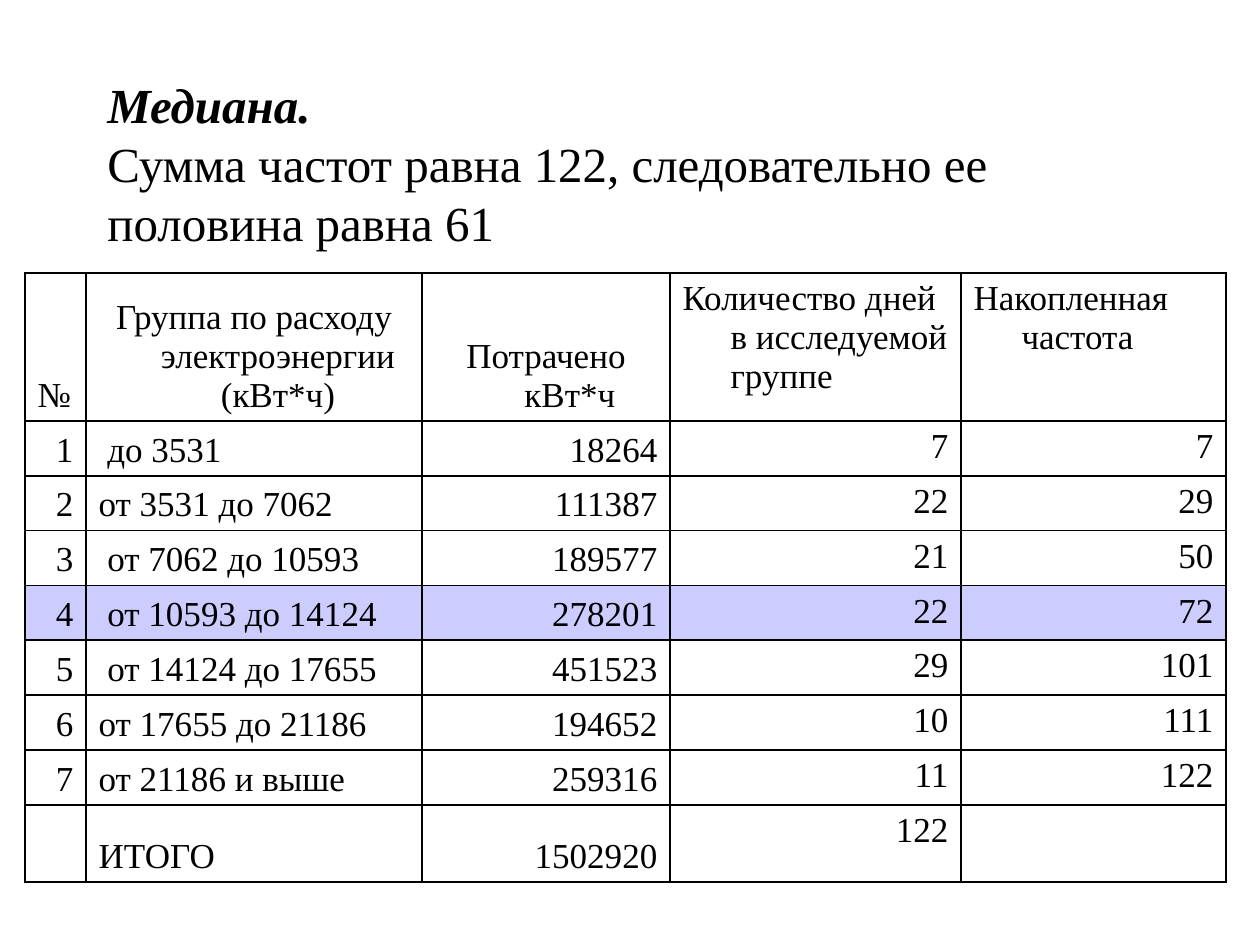
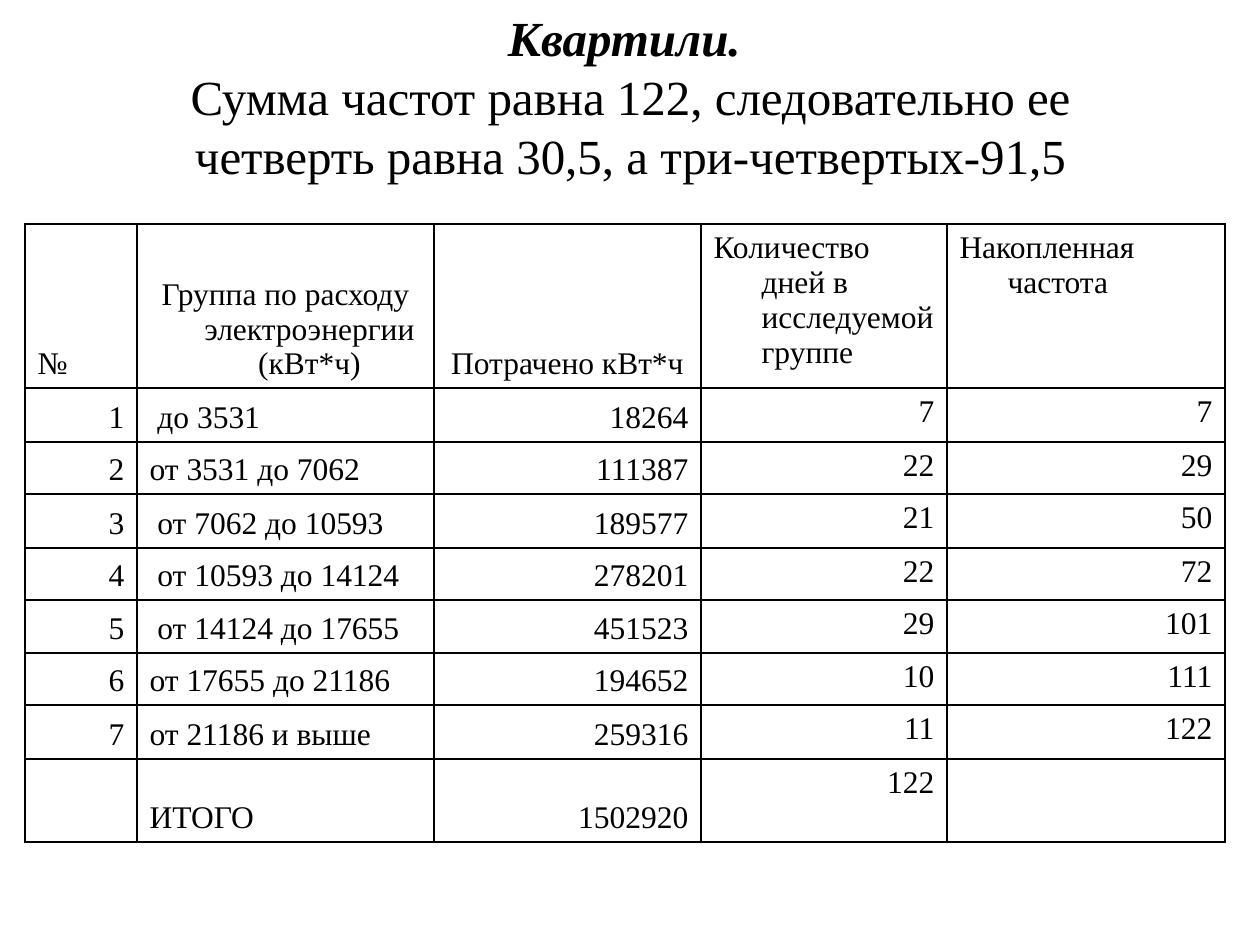
"""Two slides on the median and quartiles of grouped electricity use."""
import pptx
import pptx.dml.color
import pptx.enum.text
import pptx.oxml
import pptx.oxml.ns
import pptx.util

HEADER = ["№", "Группа по расходу электроэнергии (кВт*ч)", "Потрачено кВт*ч",
          "Количество дней в исследуемой группе", "Накопленная частота"]
GROUPS = [
    ("1", " до 3531", "18264", "7", "7"),
    ("2", "от 3531 до 7062", "111387", "22", "29"),
    ("3", " от 7062 до 10593", "189577", "21", "50"),
    ("4", " от 10593 до 14124", "278201", "22", "72"),
    ("5", " от 14124 до 17655", "451523", "29", "101"),
    ("6", "от 17655 до 21186", "194652", "10", "111"),
    ("7", "от 21186 и выше", "259316", "11", "122"),
    ("", "ИТОГО", "1502920", "122", ""),
]
SLIDES = [
    dict(heading="Медиана.",
         finding="Сумма частот равна 122, следовательно ее половина равна 61",
         align="l", title_top=84, title_height=158, table_top=273, size=20,
         cols=[61, 336, 248, 291, 265],
         rows=[148, 55, 54, 55, 54, 55, 55, 55, 77], marked_row=4),
    dict(heading="Квартили. ",
         finding="Сумма частот равна 122, следовательно ее четверть равна 30,5, "
                 "а три-четвертых-91,5",
         align="c", title_top=26, title_height=139, table_top=224, size=18,
         cols=[112, 297, 267, 246, 278],
         rows=[164, 54, 52, 54, 52, 53, 52, 54, 83], marked_row=None),
]

FONT, INK, MARK = "Times New Roman", "000000", "CCCCFF"
TITLE_LEFT, TITLE_WIDTH, TITLE_SIZE, TITLE_LEADING = 95, 1071, 28, 33.7
TABLE_LEFT, HANGING = 25, 48
HEADER_ALIGN, BODY_ALIGN = "lccll", "rjrrr"
ANCHORS = "bbbtt"
ALIGN = dict(l=pptx.enum.text.PP_ALIGN.LEFT, c=pptx.enum.text.PP_ALIGN.CENTER,
             r=pptx.enum.text.PP_ALIGN.RIGHT, j=pptx.enum.text.PP_ALIGN.JUSTIFY)
ANCHOR = dict(t=pptx.enum.text.MSO_ANCHOR.TOP, b=pptx.enum.text.MSO_ANCHOR.BOTTOM)


def px(n):
    return pptx.util.Emu(round(n * 914400 / 126))


def color(value):
    return pptx.dml.color.RGBColor.from_string(value)


def add_text(p, text, size, bold=False, italic=False):
    r = p.add_run()
    r.text = text
    r.font.name, r.font.size = FONT, pptx.util.Pt(size)
    r.font.bold, r.font.italic = bold, italic
    r.font.color.rgb = color(INK)


def add_borders(cell):
    tc_pr = cell._tc.get_or_add_tcPr()
    for i, side in enumerate("LRTB"):
        tc_pr.insert(i, pptx.oxml.parse_xml(
            f'<a:ln{side} {pptx.oxml.ns.nsdecls("a")} w="12700"><a:solidFill>'
            f'<a:srgbClr val="{INK}"/></a:solidFill></a:ln{side}>'))


def add_title(s, slide):
    sp = s.shapes.add_textbox(px(TITLE_LEFT), px(slide["title_top"]),
                              px(TITLE_WIDTH), px(slide["title_height"]))
    tf = sp.text_frame
    tf.word_wrap = True
    tf.vertical_anchor = pptx.enum.text.MSO_ANCHOR.MIDDLE
    p = tf.paragraphs[0]
    p.alignment = ALIGN[slide["align"]]
    p.line_spacing = pptx.util.Pt(TITLE_LEADING)
    add_text(p, slide["heading"], TITLE_SIZE, bold=True, italic=True)
    p.add_line_break()
    add_text(p, slide["finding"], TITLE_SIZE)


def fill_cell(cell, text, size, align, anchor, marked):
    if marked:
        cell.fill.solid()
        cell.fill.fore_color.rgb = color(MARK)
    else:
        cell.fill.background()
    add_borders(cell)
    cell.vertical_anchor = ANCHOR[anchor]
    p = cell.text_frame.paragraphs[0]
    p.alignment = ALIGN[align]
    p_pr = p._p.get_or_add_pPr()
    p_pr.set("marL", str(px(HANGING)))
    p_pr.set("indent", str(-px(HANGING)))
    if text:
        add_text(p, text, size)


def add_frequency_table(s, slide):
    cols, rows = slide["cols"], slide["rows"]
    table = s.shapes.add_table(len(rows), len(cols), px(TABLE_LEFT), px(slide["table_top"]),
                               px(sum(cols)), px(sum(rows))).table
    table.first_row = table.horz_banding = False
    for column, width in zip(table.columns, cols):
        column.width = px(width)
    for row, height in zip(table.rows, rows):
        row.height = px(height)
    for i, texts in enumerate([HEADER, *GROUPS]):
        aligns = BODY_ALIGN if i else HEADER_ALIGN
        for j, text in enumerate(texts):
            fill_cell(table.cell(i, j), text, slide["size"], aligns[j], ANCHORS[j],
                      i == slide["marked_row"])


def main():
    prs = pptx.Presentation()
    prs.slide_width, prs.slide_height = px(1260), px(945)
    for slide in SLIDES:
        s = prs.slides.add_slide(prs.slide_layouts[6])
        add_title(s, slide)
        add_frequency_table(s, slide)
    prs.save("out.pptx")


if __name__ == "__main__":
    main()
